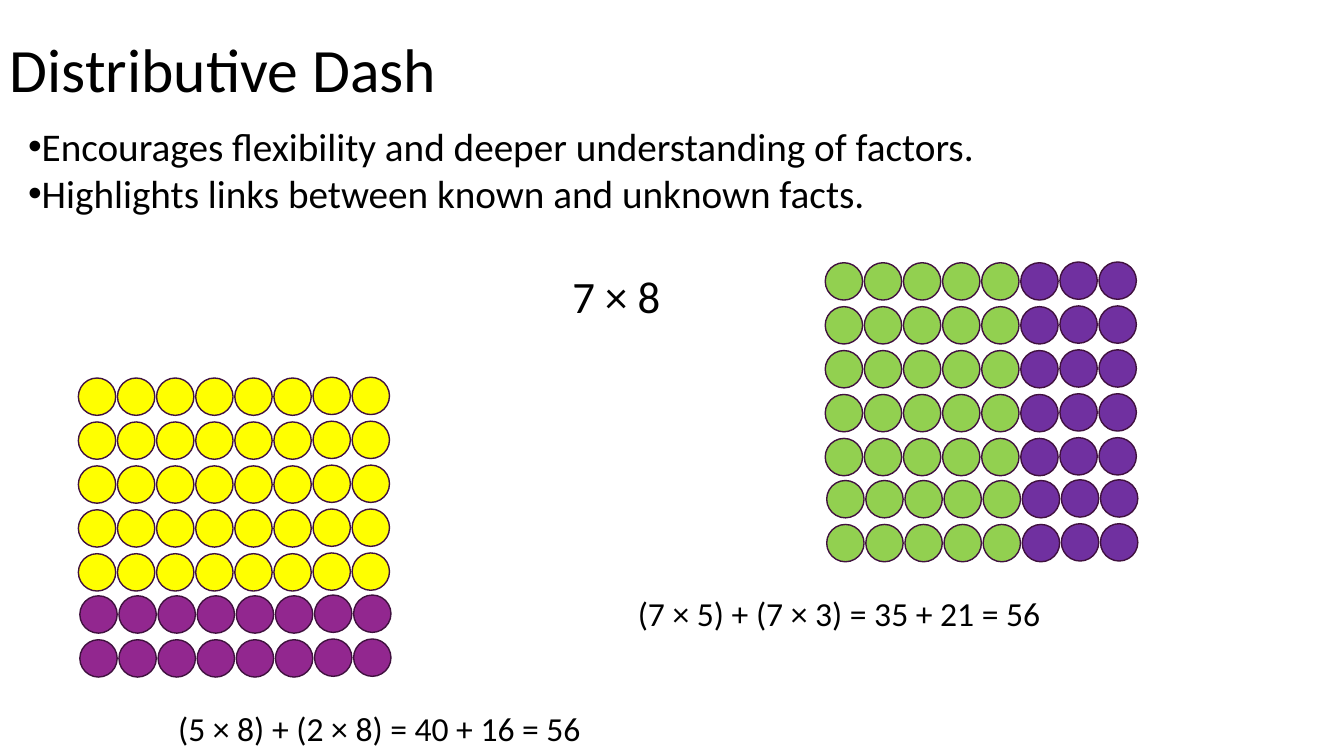
from itertools import product
from lxml.etree import SubElement
from pptx import Presentation
from pptx.dml.color import RGBColor
from pptx.enum.shapes import MSO_SHAPE as Shape
from pptx.enum.text import MSO_ANCHOR as Anchor, MSO_AUTO_SIZE as Auto
from pptx.oxml.ns import qn
from pptx.util import Inches, Pt


def tint(code):
    return RGBColor.from_string(code)


class Board:
    font = "Calibri"
    ink = "000000"
    edge = "40113F"
    size = 2.78
    step = 2.91, 5.81

    def __init__(self, deck):
        self.deck = deck
        self.col = deck.slide_width / 100
        self.row = deck.slide_height / 100
        self.page = deck.slides.add_slide(deck.slide_layouts[6])

    def place(self, x, y, w, h):
        return [int(n) for n in (x * self.col, y * self.row, w * self.col, h * self.row)]

    def text(self, area, lines, size, wrap=False, space=1.0, mark=None):
        frame = self.page.shapes.add_textbox(*self.place(*area)).text_frame
        frame.word_wrap = wrap
        frame.auto_size = Auto.NONE if wrap else Auto.SHAPE_TO_FIT_TEXT
        frame.vertical_anchor = Anchor.MIDDLE
        frame.text = "\n".join(lines)
        for para in frame.paragraphs:
            para.line_spacing = space
            if mark:
                props = para._p.get_or_add_pPr()
                SubElement(props, qn("a:buFont"), typeface="Arial")
                SubElement(props, qn("a:buChar"), char=mark)
            para.font.name = self.font
            para.font.size = Pt(size)
            para.font.color.rgb = tint(self.ink)

    def dot(self, x, y, fill):
        left, top, side, _ = self.place(x, y, self.size, 0)
        disc = self.page.shapes.add_shape(Shape.OVAL, left, top, side, side)
        disc.shadow.inherit = False
        disc.fill.solid()
        disc.fill.fore_color.rgb = tint(fill)
        disc.line.color.rgb = tint(self.edge)
        disc.line.width = Pt(1)

    def array(self, x, y, pick):
        wide, high = self.step
        for row, col in product(range(7), range(8)):
            low, late = row > 4, col > 5
            self.dot(
                x + col * wide + 0.11 * low,
                y + row * high - 0.24 * low - 0.1 * late,
                pick(row, col),
            )


def main():
    deck = Presentation()
    deck.slide_width, deck.slide_height = Inches(13.33), Inches(7.5)
    board = Board(deck)
    board.text((0, 0, 86.25, 19.33), ["Distributive Dash"], 44, wrap=True, space=0.9)
    points = [
        "Encourages flexibility and deeper understanding of factors.",
        "Highlights links between known and unknown facts.",
    ]
    board.text((1.35, 15.47, 73.12, 13.87), points, 28, mark="•")
    board.text((41.85, 34.8, 8.18, 8.53), ["7 × 8"], 32)
    board.array(5.83, 50, lambda row, col: "FFFF00" if row < 5 else "92278F")
    board.text((12.52, 92.93, 31.65, 6.67), ["(5 × 8) + (2 × 8) = 40 + 16 = 56"], 24)
    board.array(61.4, 34.75, lambda row, col: "92D050" if col < 5 else "7030A0")
    board.text((46.72, 77.73, 31.65, 6.67), ["(7 × 5) + (7 × 3) = 35 + 21 = 56"], 24)
    deck.save("out.pptx")


if __name__ == "__main__":
    main()
